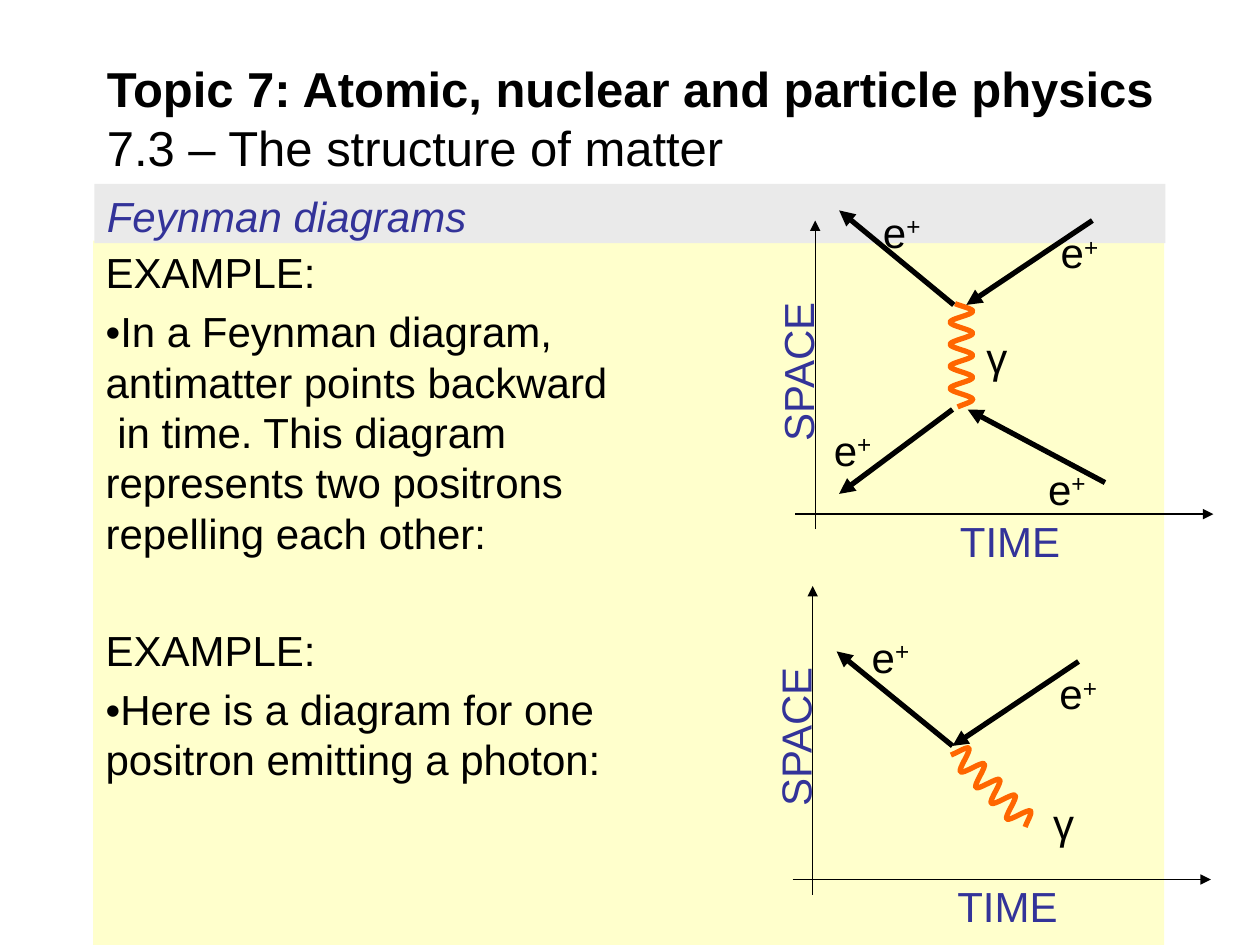
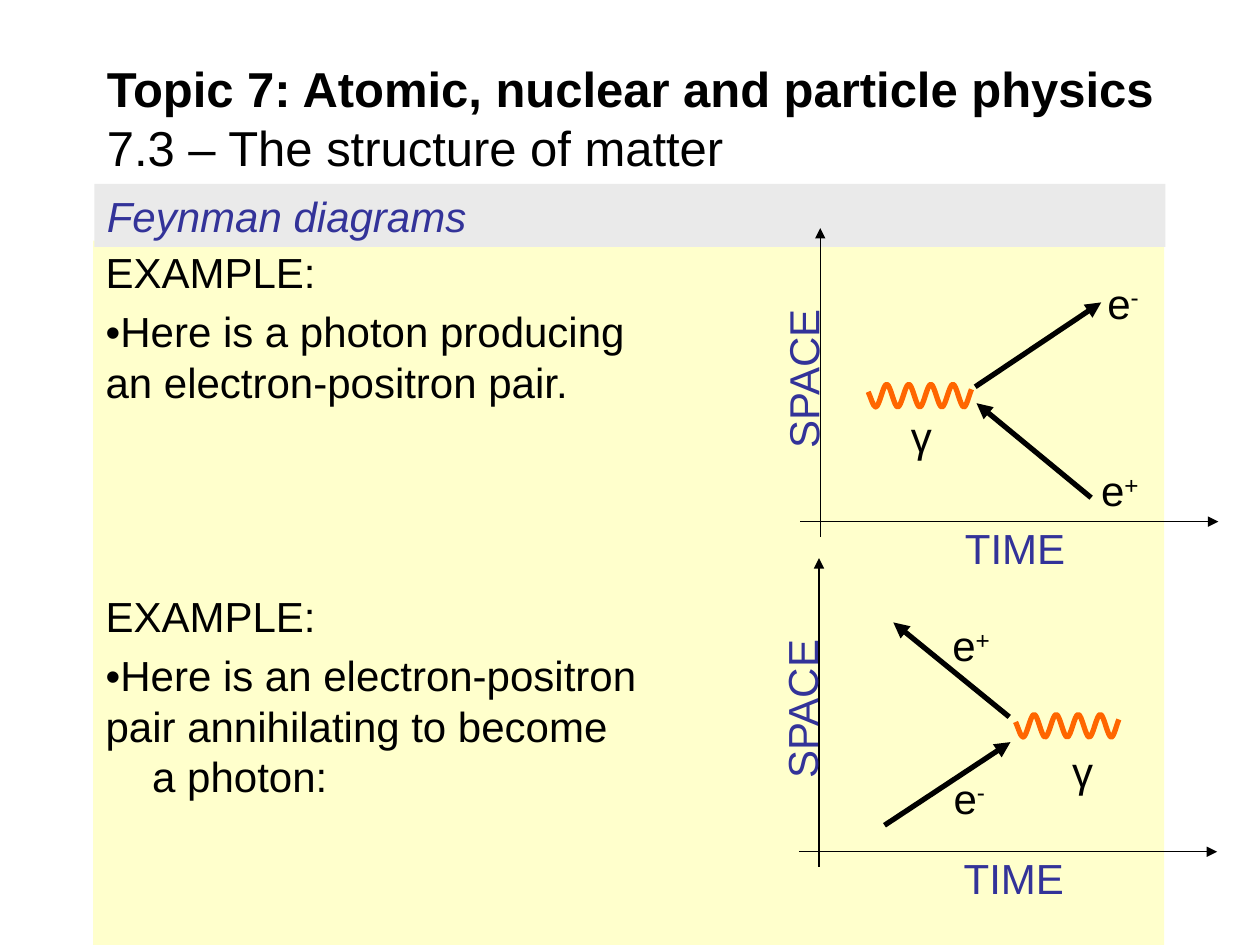
from lxml import etree
from pptx import Presentation
from pptx import util as u
from pptx.dml.color import RGBColor
from pptx.enum import shapes, text
from pptx.oxml.ns import qn

PX = 9144
BLACK = RGBColor(0, 0, 0)
BLUE = RGBColor(0x33, 0x33, 0x99)
ORANGE = RGBColor(0xFF, 0x66, 0x00)
CREAM = RGBColor(0xFF, 0xFF, 0xCC)
GREY = RGBColor(0xEA, 0xEA, 0xEA)
PLAIN = dict(name="Arial", size=u.Pt(24))
BLANK_LINE = 33.55
PARA_GAP = 4.8
INDENT = 37


def px(*vals):
    return [round(v * PX) for v in vals]


def set_all(obj, **vals):
    for key, val in vals.items():
        setattr(obj, key, val)


def add_run(para, words, color=BLACK, **style):
    run = para.add_run()
    run.text = words
    set_all(run.font, **{**PLAIN, **style})
    run.font.color.rgb = color
    return run


def add_text(slide, box, words, color=BLACK, turn=0):
    shape = slide.shapes.add_textbox(*px(*box))
    shape.rotation = turn
    shape.text_frame.word_wrap = True
    para = shape.text_frame.paragraphs[0]
    add_run(para, words, color)
    return para


def add_panel(slide, box, fill):
    shape = slide.shapes.add_shape(shapes.MSO_SHAPE.RECTANGLE, *px(*box))
    shape.shadow.inherit = False
    shape.fill.solid()
    shape.fill.fore_color.rgb = fill
    shape.line.fill.background()
    set_all(shape.text_frame, word_wrap=True, vertical_anchor=text.MSO_ANCHOR.TOP)
    shape.text_frame.paragraphs[0].alignment = text.PP_ALIGN.LEFT
    return shape.text_frame


def add_title(slide):
    frame = slide.shapes.add_textbox(*px(75, 48, 890, 91)).text_frame
    set_all(frame, word_wrap=True, vertical_anchor=text.MSO_ANCHOR.MIDDLE)
    para = frame.paragraphs[0]
    big = u.Pt(28)
    add_run(para, "Topic 7: Atomic, nuclear and particle physics", size=big, bold=True)
    para.add_line_break()
    add_run(para, "7.3 – The structure of matter", size=big)


def add_body(slide, paras):
    frame = add_panel(slide, (74, 191, 850, 559), CREAM)
    for i, (words, gap) in enumerate(paras):
        para = frame.add_paragraph() if i else frame.paragraphs[0]
        set_all(para, alignment=text.PP_ALIGN.LEFT, space_before=u.Pt(gap))
        if "\t" in words:
            tabs = etree.SubElement(para._p.get_or_add_pPr(), qn("a:tabLst"))
            etree.SubElement(tabs, qn("a:tab"), pos=str(INDENT * PX), algn="l")
        for j, line in enumerate(words.split("\n")):
            if j:
                para.add_line_break()
            add_run(para, line)


def add_frame(slide, band, paras):
    add_body(slide, paras)
    frame = add_panel(slide, (75, 146, 850, band), GREY)
    add_run(frame.paragraphs[0], "Feynman diagrams", BLUE, italic=True)
    add_title(slide)


def add_arrow(slide, ends, width=3):
    line = slide.shapes.add_connector(shapes.MSO_CONNECTOR.STRAIGHT, *px(*ends))
    line.line.color.rgb = BLACK
    line.line.width = u.Pt(width)
    props = line.element.spPr
    etree.SubElement(props.find(qn("a:ln")), qn("a:tailEnd"), type="triangle")
    etree.SubElement(props, qn("a:effectLst"))


def add_axes(slide, x, y):
    add_arrow(slide, (x, y, x, y - 245), 0.75)
    add_arrow(slide, (x - 16, y - 12, x + 316, y - 12), 0.75)
    add_text(slide, (x - 91, y - 162, 154, 50), "SPACE", BLUE, 270)
    add_text(slide, (x + 105, y - 16, 106, 50), "TIME", BLUE)


def bend(wave, knots):
    steps = wave.element.findall(".//" + qn("a:lnTo"))
    last = len(steps) - 1
    for i, step in enumerate(steps):
        (x1, y1), (x2, y2) = knots[i:i + 2]
        third, rise = (x2 - x1) / 3, (y2 - y1) / 3
        curve = [(x1 + third, y1 if i else y1 + rise),
                 (x2 - third, y2 - rise if i == last else y2), (x2, y2)]
        step.tag = qn("a:cubicBezTo")
        for old in list(step):
            step.remove(old)
        for x, y in curve:
            across, down = px(x, y)
            etree.SubElement(step, qn("a:pt"), x=str(across), y=str(down))


def add_wave(slide, x, y, angle):
    crests = [(6 + 8.75 * i, 0 if i % 2 else 18) for i in range(9)]
    knots = [(0, 6), *crests, (82, 4)]
    build = slide.shapes.build_freeform(*knots[0], scale=PX)
    build.add_line_segments(knots[1:], close=False)
    wave = build.convert_to_shape(*px(x - 41, y - 9))
    frame = wave.element.find(".//" + qn("a:path"))
    set_size = dict(w=82 * PX, h=18 * PX)
    for key, val in set_size.items():
        frame.set(key, str(val))
    start = frame.find(qn("a:moveTo")).find(qn("a:pt"))
    start.set("x", "0")
    start.set("y", str(knots[0][1] * PX))
    bend(wave, knots)
    set_all(wave, left=px(x - 41)[0], top=px(y - 9)[0],
            width=82 * PX, height=18 * PX, rotation=angle)
    wave.shadow.inherit = False
    wave.fill.background()
    wave.line.color.rgb = ORANGE
    wave.line.width = u.Pt(3)


def add_graph(slide, axes, wave, arrows, marks, photon):
    add_wave(slide, *wave)
    for ends in arrows:
        add_arrow(slide, ends)
    add_axes(slide, *axes)
    for x, y, sign in marks:
        para = add_text(slide, (x, y, 70, 50), "e")
        run = add_run(para, sign)
        run._r.get_or_add_rPr().set("baseline", "30000")
    add_text(slide, (*photon, 48, 50), "γ")


def repel(slide):
    add_graph(slide, (647, 420), (763, 282, 270),
              [(757, 242, 666, 167), (756, 325, 666, 392),
               (877, 383, 768, 325), (867, 175, 767, 242)],
              [(691, 159, "+"), (832, 175, "+"), (652, 332, "+"), (822, 363, "+")],
              (773, 258))


def emit(slide):
    add_graph(slide, (645, 710), (787, 625, 225.5),
              [(756, 592, 664, 517), (856, 525, 756, 592)],
              [(682, 496, "+"), (831, 525, "+")], (826, 628))


def create(slide):
    add_graph(slide, (651, 426), (730, 314, 0),
              [(866, 395, 775, 320), (774, 307, 874, 240)],
              [(869, 215, "-"), (864, 364, "+")], (713, 321))


def destroy(slide):
    add_graph(slide, (650, 688), (847, 576, 0),
              [(801, 569, 709, 494), (702, 655, 802, 589)],
              [(747, 608, "-"), (746, 487, "+")], (841, 587))


def main():
    deck = Presentation()
    set_all(deck, slide_width=1000 * PX, slide_height=750 * PX)
    first, second = [deck.slides.add_slide(deck.slide_layouts[6]) for _ in range(2)]

    add_frame(first, 47, [
        ("EXAMPLE:", PARA_GAP),
        ("•In a Feynman diagram,\nantimatter points backward\n in time. This diagram\n"
         "represents two positrons\nrepelling each other:", PARA_GAP),
        ("EXAMPLE:", PARA_GAP + BLANK_LINE),
        ("•Here is a diagram for one\npositron emitting a photon:", PARA_GAP),
    ])
    repel(first)
    emit(first)

    add_frame(second, 50, [
        ("EXAMPLE:", PARA_GAP),
        ("•Here is a photon producing\nan electron-positron pair.", PARA_GAP),
        ("EXAMPLE:", PARA_GAP + 3 * BLANK_LINE),
        ("•Here is an electron-positron\npair annihilating to become\n\ta photon:", PARA_GAP),
    ])
    create(second)
    destroy(second)

    deck.save("out.pptx")


if __name__ == "__main__":
    main()
